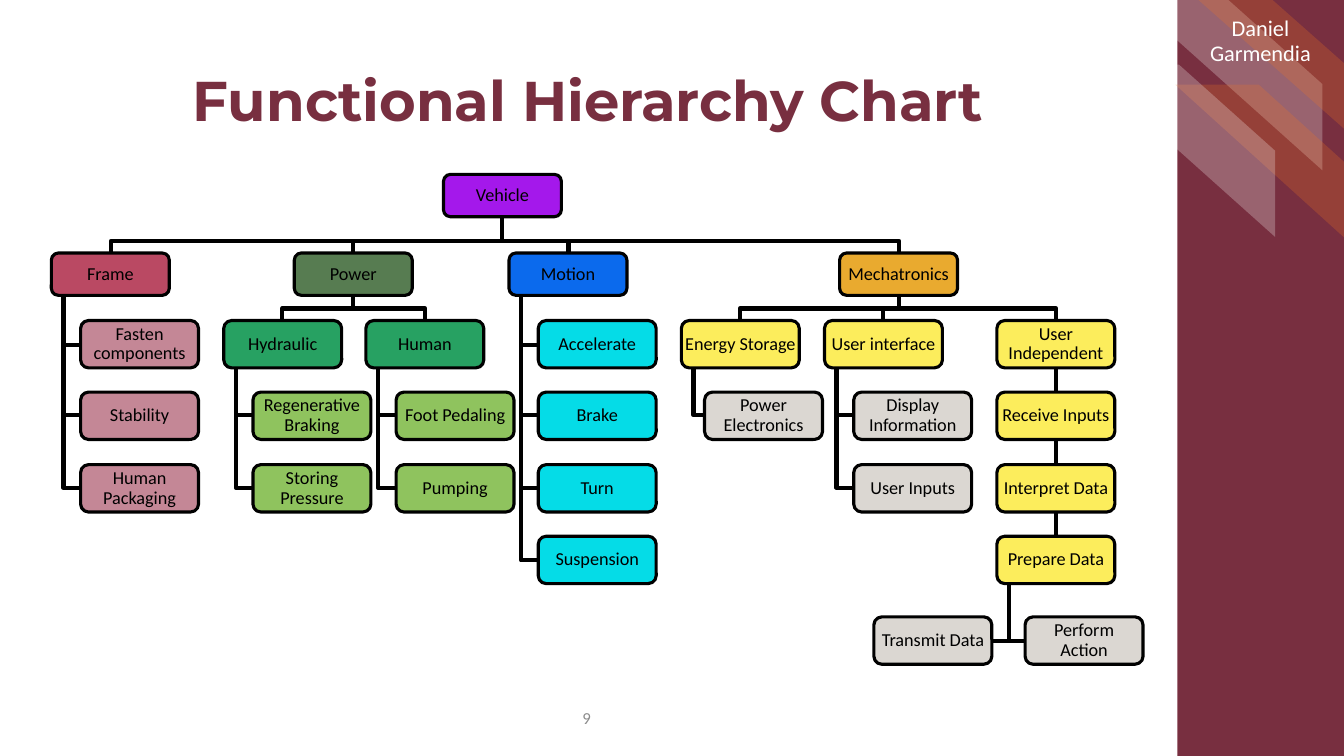
from dataclasses import dataclass

from lxml.etree import SubElement
from pptx import Presentation
from pptx.dml.color import RGBColor
from pptx.enum.shapes import MSO_CONNECTOR, MSO_SHAPE
from pptx.enum.text import MSO_ANCHOR, PP_ALIGN
from pptx.oxml.ns import qn
from pptx.util import Pt

PX = 9144
MAROON, ORANGE, WHITE, BLACK = "782F40", "EE7624", "FFFFFF", "000000"
ROSE, GREEN, LIME = "C48796", "27A162", "8FC35E"
CYAN, YELLOW, GREY = "05DCE7", "FCED5C", "DBD7D2"

BOX_WIDTH = 117
ROW_TOPS = [173, 251, 318, 389, 461, 532, 612]
STEM = 12

STRIPES = [
    (1121, -2, 191, 171, WHITE, 0.5),
    (1166, 84, 169, 153, ORANGE, 0.51),
    (1074, 64, 191, 171, WHITE, 0.5),
    (1189, 0, 147, 130, ORANGE, 0.5),
]


@dataclass
class Node:
    text: str
    left: int
    row: int
    colour: str
    parent: str = ""
    link: str = ""

    @property
    def top(self):
        return ROW_TOPS[self.row]

    @property
    def height(self):
        return 42 if self.row < 2 else 47

    @property
    def right(self):
        return self.left + BOX_WIDTH

    @property
    def bottom(self):
        return self.top + self.height

    @property
    def centre(self):
        return self.left + BOX_WIDTH / 2

    @property
    def middle(self):
        return self.top + self.height / 2


NODES = [
    Node("Vehicle", 440, 0, "A418EB"),
    Node("Frame", 51, 1, "BA4963", "Vehicle", "fork"),
    Node("Fasten components", 80, 2, ROSE, "Frame", "rail"),
    Node("Stability", 80, 3, ROSE, "Frame", "rail"),
    Node("Human Packaging", 80, 4, ROSE, "Frame", "rail"),
    Node("Power", 292, 1, "577C51", "Vehicle", "fork"),
    Node("Hydraulic", 222, 2, GREEN, "Power", "fork"),
    Node("Regenerative Braking", 251, 3, LIME, "Hydraulic", "rail"),
    Node("Storing Pressure", 251, 4, LIME, "Hydraulic", "rail"),
    Node("Human", 363, 2, GREEN, "Power", "fork"),
    Node("Foot Pedaling", 393, 3, LIME, "Human", "rail"),
    Node("Pumping", 393, 4, LIME, "Human", "rail"),
    Node("Motion", 505, 1, "0B6AED", "Vehicle", "fork"),
    Node("Accelerate", 534, 2, CYAN, "Motion", "rail"),
    Node("Brake", 534, 3, CYAN, "Motion", "rail"),
    Node("Turn", 534, 4, CYAN, "Motion", "rail"),
    Node("Suspension", 534, 5, CYAN, "Motion", "rail"),
    Node("Mechatronics", 833, 1, "E9AA2F", "Vehicle", "fork"),
    Node("Energy Storage", 676, 2, YELLOW, "Mechatronics", "fork"),
    Node("Power Electronics", 699, 3, GREY, "Energy Storage", "rail"),
    Node("User interface", 818, 2, YELLOW, "Mechatronics", "fork"),
    Node("Display Information", 847, 3, GREY, "User interface", "rail"),
    Node("User Inputs", 847, 4, GREY, "User interface", "rail"),
    Node("User Independent", 989, 2, YELLOW, "Mechatronics", "fork"),
    Node("Receive Inputs", 989, 3, YELLOW, "User Independent", "straight"),
    Node("Interpret Data", 989, 4, YELLOW, "Receive Inputs", "straight"),
    Node("Prepare Data", 989, 5, YELLOW, "Interpret Data", "straight"),
    Node("Transmit Data", 867, 6, GREY, "Prepare Data", "rail"),
    Node("Perform Action", 1017, 6, GREY, "Prepare Data", "rail"),
]


def px(*lengths):
    return [round(length * PX) for length in lengths]


def colour(hex_code):
    return RGBColor.from_string(hex_code)


def apply(target, values):
    for name, value in values.items():
        setattr(target, name, value)


def write(box, text, size, hex_code, font="Calibri", bold=False, margins=(10, 5), spacing=0.9):
    across, down = px(*margins)
    frame = box.text_frame
    apply(frame, {"word_wrap": True, "vertical_anchor": MSO_ANCHOR.MIDDLE,
                  "margin_left": across, "margin_right": across,
                  "margin_top": down, "margin_bottom": down})
    para = frame.paragraphs[0]
    apply(para, {"alignment": PP_ALIGN.CENTER, "line_spacing": spacing})
    span = para.add_run()
    span.text = text
    apply(span.font, {"name": font, "size": Pt(size), "bold": bold})
    span.font.color.rgb = colour(hex_code)


def add_label(page, area, text, size, hex_code, **formats):
    write(page.shapes.add_textbox(*px(*area)), text, size, hex_code, **formats)


def add_filled(page, preset, area, hex_code):
    shape = page.shapes.add_shape(preset, *px(*area))
    shape.shadow.inherit = False
    shape.fill.solid()
    shape.fill.fore_color.rgb = colour(hex_code)
    shape.line.fill.background()
    return shape


def add_stripe(page, left, top, width, height, hex_code, cut):
    stripe = add_filled(page, MSO_SHAPE.DIAGONAL_STRIPE, (left, top, width, height), hex_code)
    stripe.adjustments[0] = cut
    properties = stripe.element.spPr
    properties.find(qn("a:xfrm")).set("flipH", "1")
    SubElement(properties.find(".//" + qn("a:srgbClr")), qn("a:alpha"), val="25000")


def set_line(shape, width):
    shape.line.width = Pt(width)
    shape.line.color.rgb = colour(BLACK)


def add_straight(page, parent, child):
    line = page.shapes.add_connector(
        MSO_CONNECTOR.STRAIGHT, *px(parent.centre, parent.bottom, child.centre, child.top))
    set_line(line, 3)
    SubElement(line.element.spPr, qn("a:effectLst"))
    return line


def add_branch(page, points):
    builder = page.shapes.build_freeform(*points[0], scale=PX)
    builder.add_line_segments(points[1:], close=False)
    branch = builder.convert_to_shape()
    branch.shadow.inherit = False
    branch.fill.background()
    set_line(branch, 3)


def fork_points(parent, child):
    bar = child.top - STEM
    return [(parent.centre, parent.bottom), (parent.centre, bar),
            (child.centre, bar), (child.centre, child.top)]


def rail_points(parent, child):
    rail = parent.left + STEM
    side = child.left if child.left > rail else child.right
    return [(rail, parent.bottom), (rail, child.middle), (side, child.middle)]


def add_node(page, node):
    area = (node.left, node.top, BOX_WIDTH, node.height)
    box = add_filled(page, MSO_SHAPE.ROUNDED_RECTANGLE, area, node.colour)
    set_line(box, 2.25)
    write(box, node.text, 13, BLACK, margins=(1, 1))
    return box


def add_hierarchy(page):
    by_text = {node.text: node for node in NODES}
    routes = {"fork": fork_points, "rail": rail_points}
    straights = []
    for node in NODES:
        parent = by_text.get(node.parent)
        if node.link == "straight":
            straights.append((add_straight(page, parent, node), node))
        elif parent:
            add_branch(page, routes[node.link](parent, node))
    boxes = {node.text: add_node(page, node) for node in NODES}
    for line, node in straights:
        line.begin_connect(boxes[node.parent], 0 + 2)
        line.end_connect(boxes[node.text], 0)


def main():
    deck = Presentation()
    deck.slide_width, deck.slide_height = px(1333.33, 750)
    page = deck.slides.add_slide(deck.slide_layouts[6])
    add_filled(page, MSO_SHAPE.RECTANGLE, (1168, 0, 166, 751), MAROON)
    for stripe in STRIPES:
        add_stripe(page, *stripe)
    add_label(page, (542, 697, 80, 30), "9", 12, "8C8C8C", spacing=1.0)
    add_label(page, (50, 50, 1067, 105), "Functional Hierarchy Chart", 40, MAROON,
              font="Montserrat", bold=True, margins=(0, 0))
    add_label(page, (1167, 0, 167, 83), "Daniel Garmendia", 16, WHITE)
    add_hierarchy(page)
    deck.save("out.pptx")


if __name__ == "__main__":
    main()
